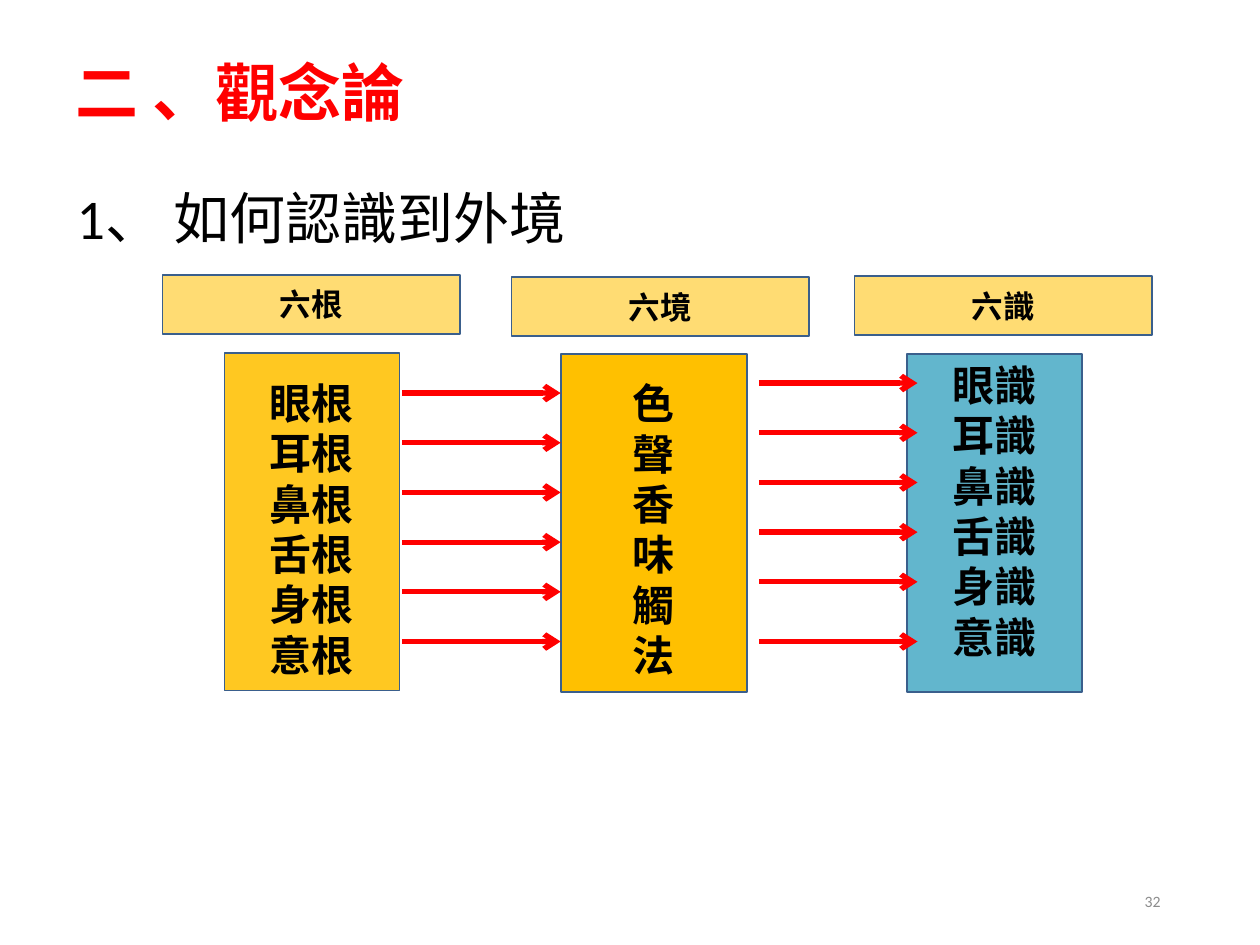
from lxml import etree
from pptx import Presentation
from pptx.dml.color import RGBColor
from pptx.enum.shapes import MSO_CONNECTOR, MSO_SHAPE
from pptx.enum.text import MSO_ANCHOR, PP_ALIGN
from pptx.oxml.ns import qn
from pptx.util import Pt

RECT = MSO_SHAPE.RECTANGLE
LINE = MSO_CONNECTOR.STRAIGHT
TOP, MID = MSO_ANCHOR.TOP, MSO_ANCHOR.MIDDLE
LEFT, CENTER, RIGHT = PP_ALIGN.LEFT, PP_ALIGN.CENTER, PP_ALIGN.RIGHT

FONT = "Calibri"
COLORS = {
    "red": "FF0000",
    "black": "000000",
    "gold": "FFC000",
    "teal": "4BACC6",
    "edge": "3A5F8C",
    "gray": "8C8C8C",
}

# Heading boxes: text, left, top
HEADS = [("六根", 92.9, 157), ("六境", 292.3, 158.4), ("六識", 488.2, 157.7)]

# Lists: lines, left, top, width, fill, opacity, top inset
LISTS = [
    ("眼根 耳根 鼻根 舌根 身根 意根", 128.2, 201.6, 100.1, "gold", 87, 14),
    ("色 聲 香 味 觸 法", 320.4, 202.3, 106.6, "gold", 100, 13.5),
    ("眼識 耳識 鼻識 舌識 身識 意識", 518.4, 202.3, 100.1, "teal", 87, 3),
]

STEP = 28.4
SPAN = 90.7  # arrow length


def color(name):
    return RGBColor.from_string(COLORS[name])


def write(shape, text, size=18, ink="black", bold=False, align=LEFT,
          anchor=MID, spacing=None, before=None, inset=3.6):
    frame = shape.text_frame
    frame.word_wrap = True
    frame.vertical_anchor = anchor
    frame.margin_top = Pt(inset)
    frame.text = text
    for para in frame.paragraphs:
        para.alignment = align
        if spacing is not None:
            para.line_spacing = spacing
        if before is not None:
            para.space_before = Pt(before)
        for run in para.runs:
            font = run.font
            font.name, font.size, font.bold = FONT, Pt(size), bold
            font.color.rgb = color(ink)


def place(shape, left, top, width, height):
    shape.left, shape.top = Pt(left), Pt(top)
    shape.width, shape.height = Pt(width), Pt(height)


def label(slide, box, text, **style):
    shape = slide.shapes.add_textbox(*map(Pt, box))
    write(shape, text, **style)


def panel(slide, box, fill, alpha, text, **style):
    shape = slide.shapes.add_shape(RECT, *map(Pt, box))
    shape.shadow.inherit = False
    shape.fill.solid()
    shape.fill.fore_color.rgb = color(fill)
    if alpha < 100:
        tint = shape.fill._xPr.find(f".//{qn('a:srgbClr')}")
        etree.SubElement(tint, qn("a:alpha"), val=str(alpha * 1000))
    shape.line.color.rgb = color("edge")
    shape.line.width = Pt(1)
    write(shape, text, bold=True, align=CENTER, **style)


def arrow(slide, left, top):
    link = slide.shapes.add_connector(
        LINE, Pt(left), Pt(top), Pt(left + SPAN), Pt(top))
    link.line.color.rgb = color("red")
    link.line.width = Pt(3)
    etree.SubElement(link.line._get_or_add_ln(), qn("a:tailEnd"), type="arrow")
    etree.SubElement(link._element.spPr, qn("a:effectLst"))


def main():
    deck = Presentation()
    deck.slide_width, deck.slide_height = Pt(720), Pt(540)
    slide = deck.slides.add_slide(deck.slide_layouts[5])

    # Title and subtitle
    title = slide.shapes.title
    place(title, 36, 21.6, 648, 67)
    write(title, "二 、觀念論", size=36, ink="red", bold=True, spacing=0.9)
    label(slide, (36.7, 105.8, 648, 385.2), "1、 如何認識到外境",
          size=32, anchor=TOP, spacing=0.9, before=7.5)

    # Headings and lists
    for text, left, top in HEADS:
        panel(slide, (left, top, 170, 33.8), "gold", 55, text)
    for text, left, top, width, fill, alpha, inset in LISTS:
        panel(slide, (left, top, width, 193), fill, alpha,
              "\n".join(text.split()), size=24, anchor=TOP, inset=inset)

    # Arrows: the last one on each side shares a height
    last = 224.6 + 5 * STEP
    for left, first in ((229.7, 224.6), (433.6, 218.9)):
        for row in range(5):
            arrow(slide, left, first + row * STEP)
        arrow(slide, left, last)

    # Page number
    label(slide, (508.3, 500.4, 162, 28.8), "32",
          size=9, ink="gray", align=RIGHT)

    deck.save("out.pptx")


if __name__ == "__main__":
    main()
